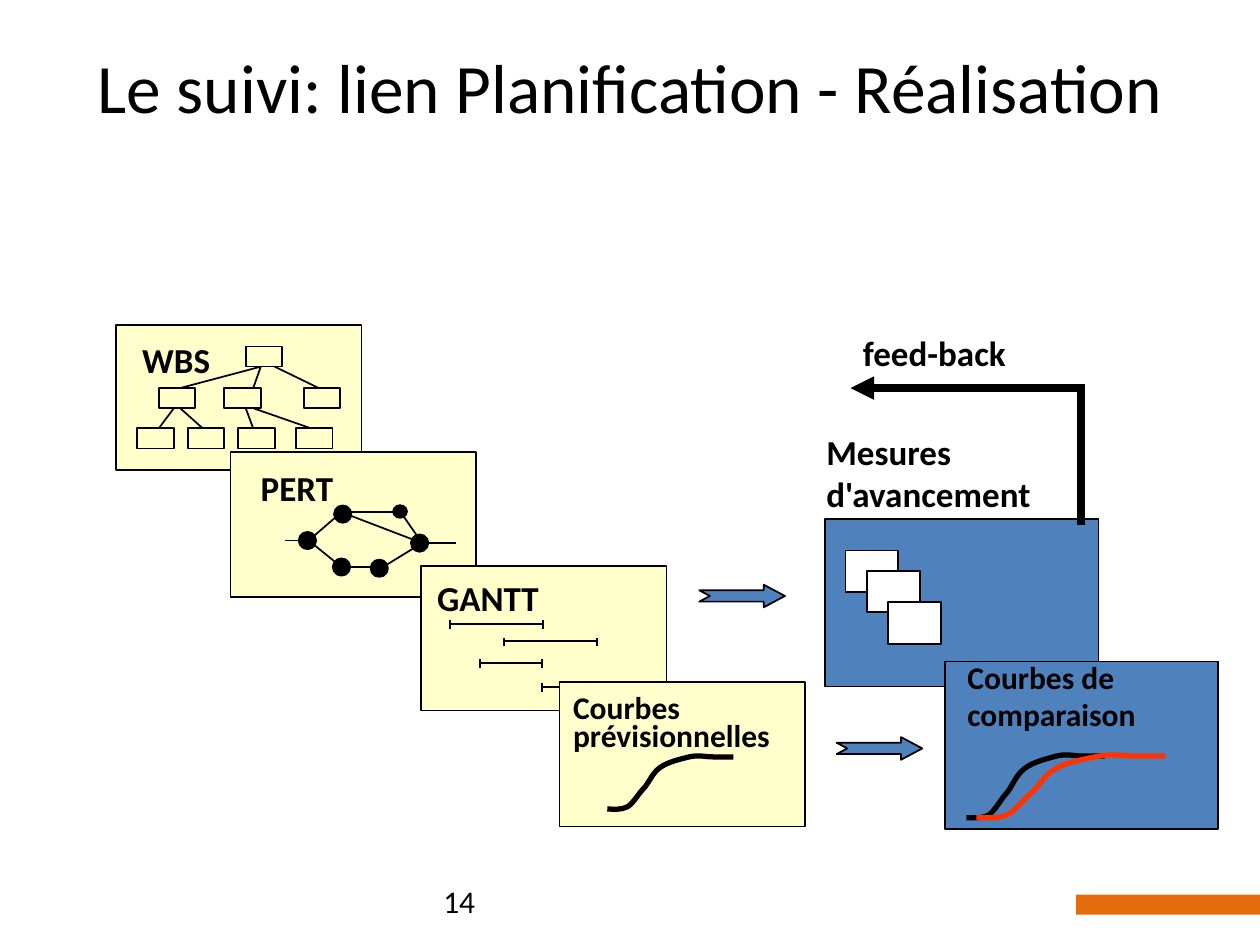
from collections import namedtuple

from lxml.etree import SubElement
from pptx import Presentation
from pptx.dml.color import RGBColor
from pptx.enum.shapes import MSO_CONNECTOR as LINE, MSO_SHAPE as SHAPE
from pptx.enum.text import MSO_ANCHOR as ANCHOR, PP_ALIGN as ALIGN
from pptx.oxml.ns import qn
from pptx.util import Inches, Pt

BLACK = RGBColor(0x00, 0x00, 0x00)
WHITE = RGBColor(0xFF, 0xFF, 0xFF)
CREAM = RGBColor(0xFF, 0xFF, 0xCC)
BLUE = RGBColor(0x4F, 0x81, 0xBD)
RED = RGBColor(0xFF, 0x33, 0x00)
ORANGE = RGBColor(0xE4, 0x6C, 0x0A)
FONT = "Calibri"

# The slide is a grid of 100 columns and 75 rows of square cells.
WIDTH, HEIGHT = Inches(10), Inches(7.5)
CELL = WIDTH // 100

# S-curve as shares of its box: a start point, then three points per cubic segment.
S_POINTS = [
    (0, 0.98),
    (0.05, 0.98), (0.11, 1), (0.16, 0.94),
    (0.21, 0.87), (0.25, 0.69), (0.3, 0.58),
    (0.34, 0.46), (0.36, 0.33), (0.42, 0.23),
    (0.48, 0.13), (0.58, 0.08), (0.65, 0.04),
    (0.72, 0), (0.78, 0.04), (0.84, 0.04),
    (0.89, 0.04), (0.95, 0.04), (1, 0.04),
]


class Box(namedtuple("Box", "left top width height")):
    """An area in grid cells."""

    def inner(self, left, top, width, height):
        return Box(self.left + left, self.top + top, width, height)

    def point(self, x, y):
        return self.left + x, self.top + y

    def emu(self):
        return [round(value * CELL) for value in self]


PAGE = Box(0, 0, 100, 75)


def add_block(page, box, fill=None, kind=SHAPE.RECTANGLE, line=BLACK, weight=1):
    block = page.shapes.add_shape(kind, *box.emu())
    block.shadow.inherit = False
    if fill is None:
        block.fill.background()
    else:
        block.fill.solid()
        block.fill.fore_color.rgb = fill
    if line is None:
        block.line.fill.background()
    else:
        block.line.color.rgb = line
        block.line.width = Pt(weight)
    return block


def add_line(page, start, end, weight=1, arrow=False):
    ends = [round(value * CELL) for value in (*start, *end)]
    line = page.shapes.add_connector(LINE.STRAIGHT, *ends)
    line.line.color.rgb = BLACK
    line.line.width = Pt(weight)
    if arrow:
        SubElement(line.line._get_or_add_ln(), qn("a:tailEnd"), type="triangle")
    SubElement(line._element.spPr, qn("a:effectLst"))


def add_text(page, box, *lines, size=20, bold=True, align=ALIGN.LEFT,
             anchor=ANCHOR.TOP, spacing=None):
    """Add one paragraph per line; spacing applies from the second on."""
    frame = page.shapes.add_textbox(*box.emu()).text_frame
    frame.word_wrap = True
    frame.vertical_anchor = anchor
    for index, text in enumerate(lines):
        para = frame.add_paragraph() if index else frame.paragraphs[0]
        para.text = text
        para.alignment = align
        para.font.name = FONT
        para.font.size = Pt(size)
        para.font.bold = bold
        para.font.color.rgb = BLACK
        if index and spacing:
            para.line_spacing = Pt(spacing)


def add_s_curve(page, box, color):
    left, top, width, height = box.emu()
    points = [(round(left + x * width), round(top + y * height)) for x, y in S_POINTS]
    builder = page.shapes.build_freeform(*points[0])
    builder.add_line_segments(points[1:], close=False)
    curve = builder.convert_to_shape()
    # Turn each three straight segments into one cubic segment.
    steps = list(curve._element.iter(qn("a:lnTo")))
    for first, second, third in zip(steps[::3], steps[1::3], steps[2::3]):
        first.tag = qn("a:cubicBezTo")
        for step in (second, third):
            first.append(step[0])
            step.getparent().remove(step)
    curve.shadow.inherit = False
    curve.fill.background()
    curve.line.color.rgb = color
    curve.line.width = Pt(3)


def draw_wbs(page, box):
    add_block(page, box, CREAM)
    levels = [(1.7, (10.3,)), (5, (3.4, 8.6, 14.9)), (8.2, (14.3, 9.7, 5.7, 1.7))]
    for row, columns in levels:
        for column in columns:
            add_block(page, box.inner(column, row, 2.9, 1.6))
    # Links between two levels: rows, then the columns of both ends.
    links = [(3.3, 5, [(11.5, 5.1), (11.5, 10.9), (12.6, 16.1)]),
             (6.6, 8.2, [(4.6, 3.4), (5.1, 6.9), (10.3, 10.9), (10.9, 15.5)])]
    for upper, lower, columns in links:
        for start, end in columns:
            add_line(page, box.point(start, upper), box.point(end, lower))
    add_text(page, box.inner(1.1, 0.6, 10.2, 4.3), "WBS")


def draw_pert(page, box):
    add_block(page, box, CREAM)
    add_text(page, box.inner(1.4, 0.6, 9.9, 4.3), "PERT")
    for left, top in ((8.3, 4.3), (5.5, 6.4), (8.2, 8.5), (11.2, 8.6), (14.4, 6.6)):
        add_block(page, box.inner(left, top, 1.2, 1.2), BLACK, SHAPE.OVAL, weight=2.25)
    add_block(page, box.inner(12.9, 4.2, 1.1, 1), BLACK, SHAPE.OVAL)
    west, north_west, south_west = (6.2, 7), (8.8, 4.75), (8.8, 9.1)
    east, north_east, south = (15.2, 7.2), (13.5, 4.75), (12.1, 9.1)
    edges = [(west, (4.3, 7)), (west, north_west), (north_west, east),
             (east, south), (south, south_west), (south_west, west),
             (east, (17.9, 7.2)), (north_west, north_east), (north_east, east)]
    for start, end in edges:
        add_line(page, box.point(*start), box.point(*end))


def draw_gantt(page, box):
    add_block(page, box, CREAM)
    add_text(page, box.inner(0.3, 0.4, 13.1, 4.3), "GANTT")
    bars = [(2.3, 9.7, 4.6, True), (6.6, 14, 6, True),
            (4.7, 9.6, 7.7, True), (9.6, 15.6, 9.6, False)]
    for start, end, row, closed in bars:
        add_line(page, box.point(start, row), box.point(end, row))
        for tick in (start, end) if closed else (start,):
            add_line(page, box.point(tick, row - 0.3), box.point(tick, row + 0.4))


def draw_forecast(page, box):
    add_block(page, box, CREAM)
    add_text(page, box.inner(0.1, 0, 20.4, 6.1), "Courbes", "prévisionnelles",
             size=18, spacing=16)
    add_s_curve(page, box.inner(3.8, 5.8, 10, 4.4), BLACK)


def draw_progress(page, box):
    add_block(page, box, BLUE)
    for x, y in ((1.6, 2.5), (3.3, 4.1), (5, 6.6)):
        add_block(page, box.inner(x, y, 4.2, 3.3), WHITE)
    add_text(page, box.inner(-0.9, -7.5, 27.1, 7.7), "Mesures d'avancement")


def draw_comparison(page, box):
    add_block(page, box, BLUE)
    add_s_curve(page, box.inner(1.7, 7.3, 11, 5.2), BLACK)
    add_s_curve(page, box.inner(2.5, 7.3, 15, 5.2), RED)
    add_text(page, box.inner(0.8, -0.8, 19.2, 7), "Courbes de comparaison", size=18)


def draw_step_arrow(page, box):
    arrow = add_block(page, box, BLUE, SHAPE.NOTCHED_RIGHT_ARROW)
    arrow.adjustments[0] = 0.5
    arrow.adjustments[1] = 0.94


def draw_feedback(page, box):
    add_line(page, box.point(18.3, 15.9), box.point(18.3, 5), weight=4.5)
    add_line(page, box.point(18.6, 5), box.point(0, 5), weight=4.5, arrow=True)
    add_text(page, box.inner(0, 0, 23.3, 4.3), "feed-back")


def draw_frame(page, box):
    """Title, page number and corner bar."""
    add_block(page, box.inner(85.4, 71, 14.6, 1.6), ORANGE, line=None)
    add_text(page, box.inner(34.2, 69.5, 31.7, 4), "14", size=18, bold=False,
             anchor=ANCHOR.MIDDLE)
    add_text(page, box.inner(5, 3, 90, 12.5), "Le suivi: lien Planification - Réalisation",
             size=39.6, bold=False, align=ALIGN.CENTER)


def main():
    deck = Presentation()
    deck.slide_width, deck.slide_height = WIDTH, HEIGHT
    page = deck.slides.add_slide(deck.slide_layouts[6])
    draw_frame(page, PAGE)
    draw_progress(page, Box(65.5, 41.2, 21.7, 13.3))
    plans = [(draw_wbs, 9.2, 25.8), (draw_pert, 18.3, 35.9),
             (draw_gantt, 33.4, 44.9), (draw_forecast, 44.4, 54.1)]
    for draw, left, top in plans:
        draw(page, Box(left, top, 19.5, 11.5))
    draw_comparison(page, Box(75, 52.5, 21.7, 13.3))
    for left, top in ((55.5, 46.4), (66.4, 58.5)):
        draw_step_arrow(page, Box(left, top, 6.8, 1.8))
    draw_feedback(page, Box(67.5, 25.8, 23.3, 15.9))
    deck.save("out.pptx")


if __name__ == "__main__":
    main()
